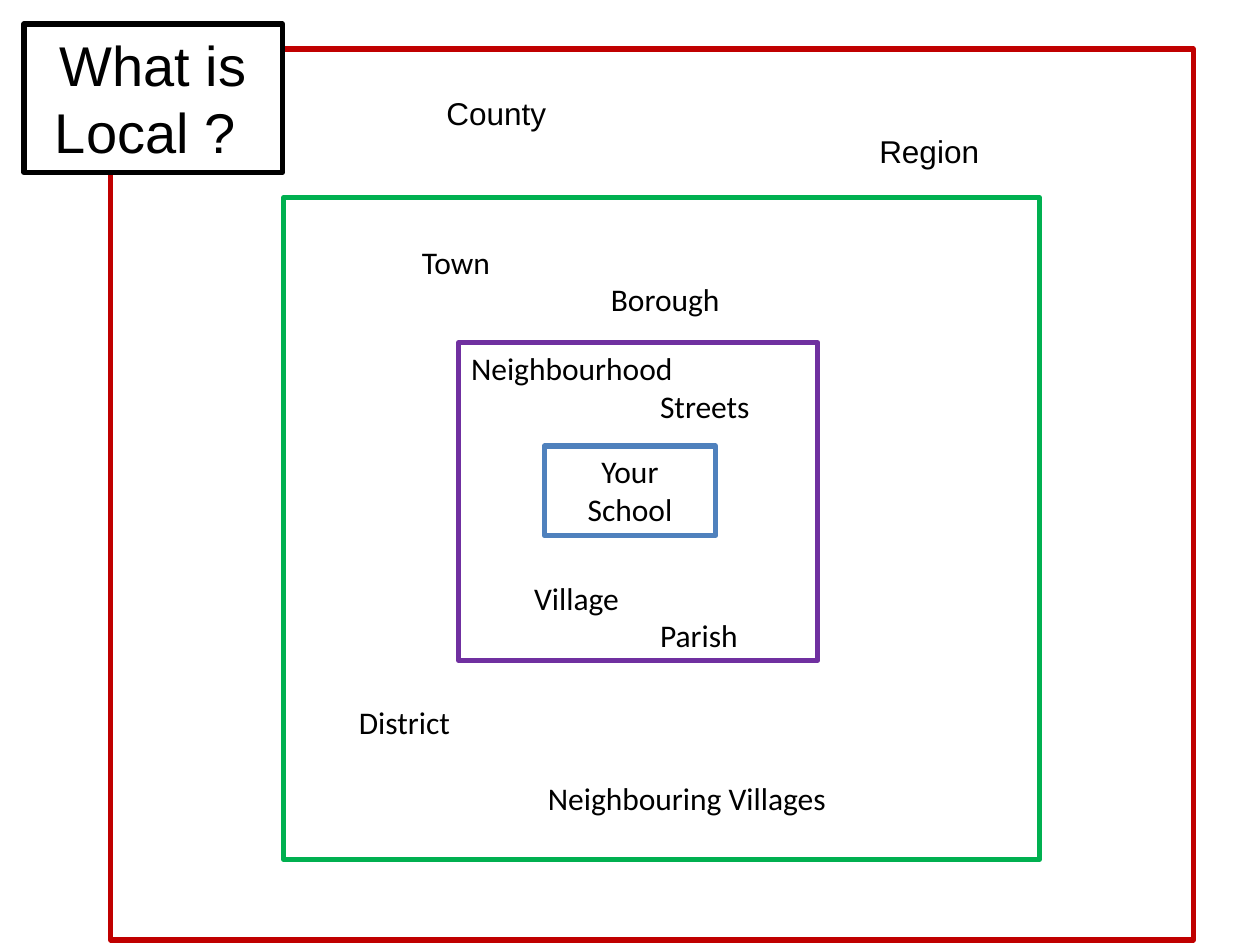
from pptx import Presentation
from pptx.dml.color import RGBColor
from pptx.enum.shapes import MSO_SHAPE
from pptx.enum.text import MSO_ANCHOR, PP_ALIGN
from pptx.util import Inches, Pt

RECT = MSO_SHAPE.RECTANGLE
TOP = MSO_ANCHOR.TOP
LEFT, CENTER = PP_ALIGN.LEFT, PP_ALIGN.CENTER

COLORS = {
    "text": "000000",
    "paper": "FFFFFF",
    "town": "00B050",
    "neighbourhood": "7030A0",
    "school": "4F81BD",
    "region": "C00000",
}
LINE_PITCH = Pt(22)
TAB = 5  # percent of the slide width


def rgb(name):
    return RGBColor.from_string(COLORS[name])


class Deck:
    def __init__(self, prs):
        self.w, self.h = prs.slide_width, prs.slide_height
        self.s = prs.slides.add_slide(prs.slide_layouts[6])

    def box(self, area, line, fill=None):
        """Outlined rectangle; area is left, top, width, height in percent of the slide."""
        x, y, w, h = area
        sp = self.s.shapes.add_shape(
            RECT, int(self.w * x / 100), int(self.h * y / 100),
            int(self.w * w / 100), int(self.h * h / 100))
        sp.shadow.inherit = False
        if fill:
            sp.fill.solid()
            sp.fill.fore_color.rgb = rgb(fill)
        else:
            sp.fill.background()
        sp.line.color.rgb = rgb(line)
        sp.line.width = Pt(3)
        sp.text_frame.word_wrap = True
        sp.text_frame.vertical_anchor = TOP
        return sp

    def add_text(self, p, text, font, size, align):
        p.alignment = align
        r = p.add_run()
        r.text = text
        r.font.name = font
        r.font.size = Pt(size)
        r.font.color.rgb = rgb("text")

    def caption(self, area, line, text, font="Calibri", size=18, fill=None):
        tf = self.box(area, line, fill).text_frame
        self.add_text(tf.paragraphs[0], text, font, size, CENTER)

    def places(self, area, line, rows, font="Calibri"):
        """Box of place names; each row is text, indent in tabs, skipped lines above."""
        tf = self.box(area, line).text_frame
        for i, (text, tabs, skipped) in enumerate(rows):
            p = tf.paragraphs[0] if i == 0 else tf.add_paragraph()
            gap = LINE_PITCH * skipped
            if i == 0:
                tf.margin_top = Inches(0.05) + gap
            elif skipped:
                p.space_before = gap
            p._p.get_or_add_pPr().set("marL", str(int(self.w * tabs * TAB / 100)))
            self.add_text(p, text, font, 18, LEFT)


def main():
    prs = Presentation()
    prs.slide_width, prs.slide_height = Inches(10), Inches(7.5)
    deck = Deck(prs)

    deck.places((22.5, 20.93, 60, 70), "town", [
        ("Town", 2, 1),
        ("Borough", 5, 0),
        ("District", 1, 10),
        ("Neighbouring Villages", 4, 1),
    ])
    deck.places((36.4, 36.27, 28.5, 33.6), "neighbourhood", [
        ("Neighbourhood", 0, 0),
        ("Streets", 3, 0),
        ("Village", 1, 4),
        ("Parish", 3, 0),
    ])
    deck.caption((43.2, 47.2, 13.6, 9.47), "school", "Your School")
    deck.places((8.8, 5.2, 85.9, 94.27), "region", [
        ("County", 5.13, 1),
        ("Region", 12, 0),
    ], font="Arial")
    deck.caption((1.9, 2.53, 20.5, 15.73), "text", "What is Local ? ",
                 font="Arial", size=32, fill="paper")

    prs.save("out.pptx")


if __name__ == "__main__":
    main()
